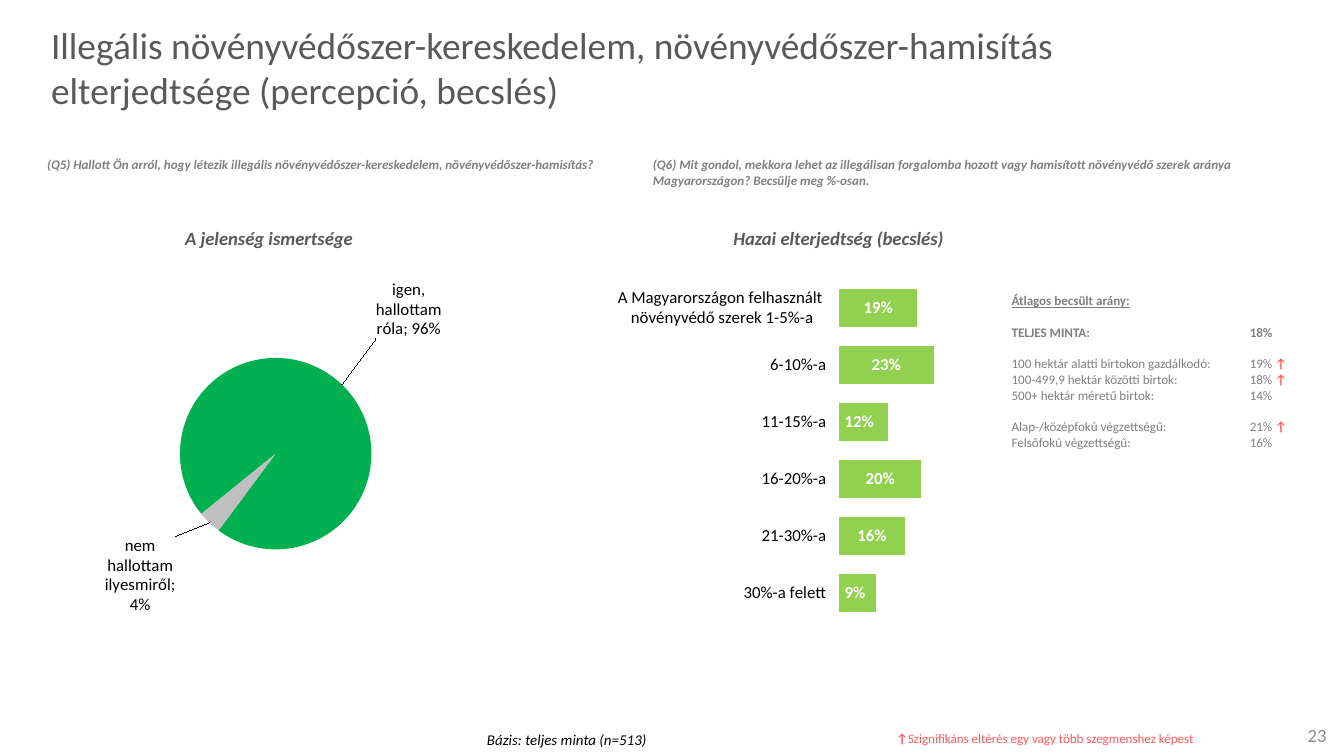
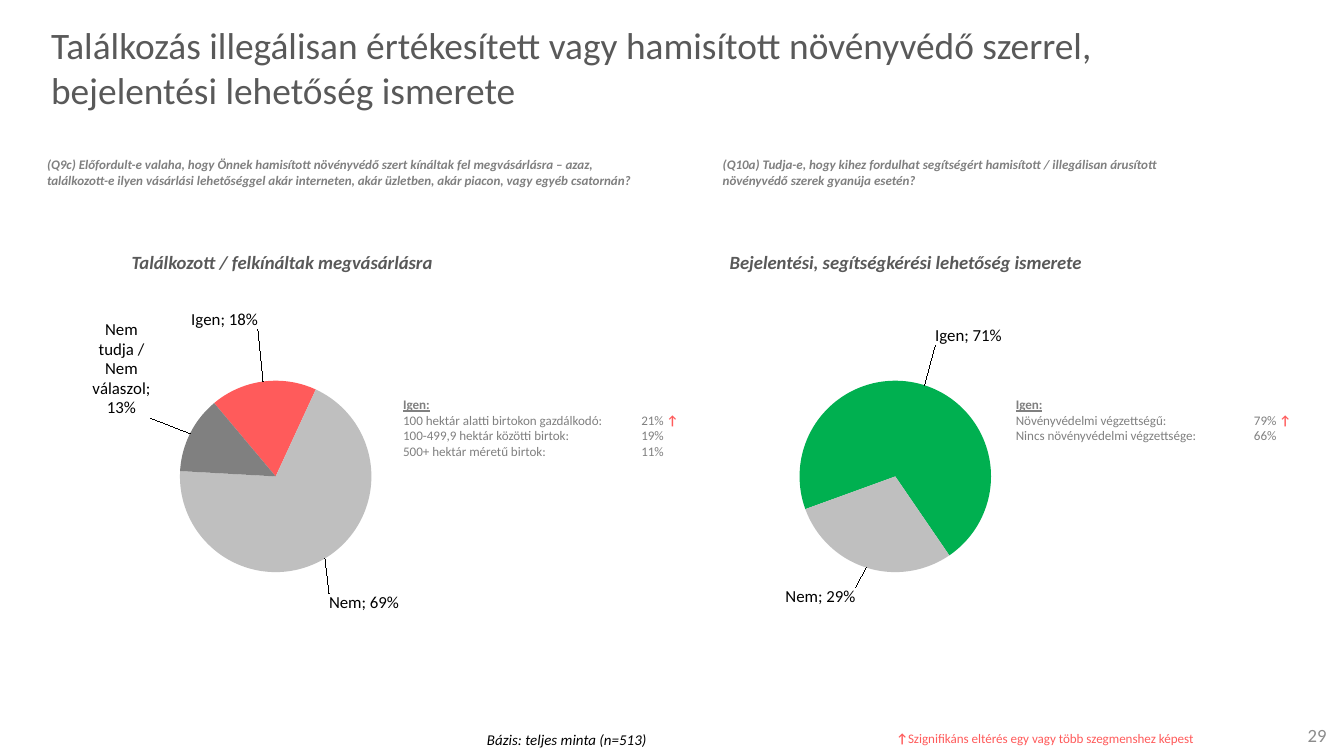
from dataclasses import dataclass, replace
from typing import NamedTuple

from pptx import Presentation, oxml
from pptx import util as u
from pptx.chart import data
from pptx.dml import color
from pptx.enum import chart as charts
from pptx.enum import text
from pptx.oxml import ns


@dataclass(frozen=True)
class Theme:
    font: str = "Calibri"
    black: str = "000000"
    white: str = "FFFFFF"
    title_gray: str = "595959"
    gray: str = "808080"
    number_gray: str = "8C8C8C"
    light_gray: str = "BFBFBF"
    green: str = "00B050"
    lime: str = "92D050"
    red: str = "FF5B5B"
    title_size: float = 20
    heading_size: float = 10
    label_size: float = 9
    base_size: float = 8
    small_size: float = 7
    note_gap: float = 8.5


THEME = Theme()


@dataclass(frozen=True)
class Style:
    size: float
    color: str
    bold: bool = False
    italic: bool = False
    underline: bool = False


TITLE = Style(THEME.title_size, THEME.title_gray)
HEADING = Style(THEME.heading_size, THEME.title_gray, bold=True, italic=True)
QUESTION = Style(THEME.small_size, THEME.gray, bold=True, italic=True)
NOTE = Style(THEME.small_size, THEME.gray)
NOTE_BOLD = replace(NOTE, bold=True)
NOTE_HEAD = replace(NOTE_BOLD, underline=True)
SIGNIFICANCE = Style(THEME.small_size, THEME.red)
ARROW = replace(SIGNIFICANCE, bold=True)
BASIS = Style(THEME.base_size, THEME.black, italic=True)
PAGE_NUMBER = Style(THEME.heading_size, THEME.number_gray)
PIE_LABEL = Style(THEME.label_size, THEME.black)
BAR_LABEL = Style(THEME.label_size, THEME.white, bold=True)


class Area(NamedTuple):
    left: float
    top: float
    width: float
    height: float


class Span(NamedTuple):
    words: str
    style: Style


class Caption(NamedTuple):
    area: Area
    words: str


class NoteLine(NamedTuple):
    label: str
    value: str
    arrow: bool = False
    bold: bool = False
    gap: bool = False


class Note(NamedTuple):
    area: Area
    head: str
    lines: list[NoteLine]


class Slice(NamedTuple):
    name: str
    value: int
    fill: str
    shift: tuple[float, float]


class Pie(NamedTuple):
    left: float
    top: float
    start: int
    slices: list[Slice]


class Bar(NamedTuple):
    name: str
    value: int
    position: str = "ctr"


class Survey(NamedTuple):
    number: int
    title: str
    questions: list[Caption]
    headings: list[Caption]
    pies: list[Pie]
    notes: list[Note]
    bars: list[Bar]


BAR_AREA = Area(10.97, 5.28, 13.59, 6.81)
BAR_PLOT = Area(0.36, 0, 0.57, 0.95)
PIE_SIZE = (7.7, 7.57)
PIE_PLOT = Area(0.23, 0.14, 0.47, 0.71)
TITLE_AREA = Area(0.71, 0.41, 22.5, 1.7)
NUMBER_AREA = Area(24, 13.51, 1.32, 0.76)
LEGEND_AREA = Area(16.69, 13.69, 6.58, 0.56)
BASIS_AREA = Area(8.15, 13.69, 5.13, 0.61)
NOTE_TABS = ((4.5, "l"), (4.72, "ctr"))

SURVEYS = [
    Survey(
        23,
        "Illegális növényvédőszer-kereskedelem, növényvédőszer-hamisítás elterjedtsége (percepció, becslés)",
        [Caption(Area(0.64, 2.84, 11.86, 0.56), "(Q5) Hallott Ön arról, hogy létezik illegális "
                 "növényvédőszer-kereskedelem, növényvédőszer-hamisítás?"),
         Caption(Area(12.09, 2.84, 12.09, 0.86), "(Q6) Mit gondol, mekkora lehet az illegálisan forgalomba "
                 "hozott vagy hamisított növényvédő szerek aránya Magyarországon? Becsülje meg %-osan.")],
        [Caption(Area(3.25, 4.17, 3.71, 0.69), "A jelenség ismertsége"),
         Caption(Area(13.61, 4.17, 4.55, 0.69), "Hazai elterjedtség (becslés)")],
        [Pie(1.63, 4.83, 231, [
            Slice("igen, hallottam róla", 96, THEME.green, (0.07, -0.1)),
            Slice("nem hallottam ilyesmiről", 4, THEME.light_gray, (-0.07, 0.02))])],
        [Note(Area(18.87, 5.41, 6.02, 3.25), "Átlagos becsült arány:", [
            NoteLine("TELJES MINTA:", "18%", bold=True, gap=True),
            NoteLine("100 hektár alatti birtokon gazdálkodó:", "19%", arrow=True, gap=True),
            NoteLine("100-499,9 hektár közötti birtok:", "18%", arrow=True),
            NoteLine("500+ hektár méretű birtok:", "14%"),
            NoteLine("Alap-/középfokú végzettségű:", "21%", arrow=True, gap=True),
            NoteLine("Felsőfokú végzettségű:", "16%")])],
        [Bar("A Magyarországon felhasznált \nnövényvédő szerek 1-5%-a", 19), Bar("6-10%-a", 23),
         Bar("11-15%-a", 12, "inBase"), Bar("16-20%-a", 20), Bar("21-30%-a", 16),
         Bar("30%-a felett", 9, "inBase")],
    ),
    Survey(
        29,
        "Találkozás illegálisan értékesített vagy hamisított növényvédő szerrel, bejelentési lehetőség ismerete",
        [Caption(Area(0.64, 2.84, 11.86, 0.86), "(Q9c) Előfordult-e valaha, hogy Önnek hamisított növényvédő "
                 "szert kínáltak fel megvásárlásra – azaz, találkozott-e ilyen vásárlási lehetőséggel akár "
                 "interneten, akár üzletben, akár piacon, vagy egyéb csatornán?"),
         Caption(Area(13.41, 2.84, 9.6, 0.86), "(Q10a) Tudja-e, hogy kihez fordulhat segítségért hamisított / "
                 "illegálisan árusított növényvédő szerek gyanúja esetén?")],
        [Caption(Area(2.24, 4.62, 6.32, 0.69), "Találkozott / felkínáltak megvásárlásra"),
         Caption(Area(13.54, 4.62, 7.29, 0.69), "Bejelentési, segítségkérési lehetőség ismerete")],
        [Pie(1.63, 5.26, 320, [
            Slice("Igen", 18, THEME.red, (-0.01, -0.11)),
            Slice("Nem", 69, THEME.light_gray, (0, 0.07)),
            Slice("Nem tudja / Nem válaszol", 13, THEME.gray, (-0.08, -0.03))]),
         Pie(13.34, 5.26, 250, [
             Slice("Igen", 71, THEME.green, (0.02, -0.08)),
             Slice("Nem", 29, THEME.light_gray, (-0.02, 0.03))])],
        [Note(Area(18.95, 7.37, 6.02, 1.14), "Igen:", [
            NoteLine("Növényvédelmi végzettségű:", "79%", arrow=True),
            NoteLine("Nincs növényvédelmi végzettsége:", "66%")]),
         Note(Area(7.37, 7.37, 6.02, 1.45), "Igen:", [
             NoteLine("100 hektár alatti birtokon gazdálkodó:", "21%", arrow=True),
             NoteLine("100-499,9 hektár közötti birtok:", "19%"),
             NoteLine("500+ hektár méretű birtok:", "11%")])],
        [],
    ),
]


def lengths(area: Area) -> list[u.Length]:
    return [u.Cm(value) for value in area]


def write(para, spans: list[Span]) -> None:
    para.text = spans[0].words
    for span in spans[1:]:
        para.add_run().text = span.words
    for run, span in zip(para.runs, spans):
        font, style = run.font, span.style
        font.name, font.size = THEME.font, u.Pt(style.size)
        font.bold, font.italic, font.underline = style.bold, style.italic, style.underline
        font.color.rgb = color.RGBColor.from_string(style.color)


def add_text(page, area: Area, spans: list[Span], wrap: bool = True, align=text.PP_ALIGN.LEFT):
    box = page.shapes.add_textbox(*lengths(area))
    frame = box.text_frame
    frame.word_wrap = wrap
    frame.auto_size = text.MSO_AUTO_SIZE.SHAPE_TO_FIT_TEXT
    write(frame.paragraphs[0], spans)
    frame.paragraphs[0].alignment = align
    return box


def add_note(page, note: Note) -> None:
    frame = add_text(page, note.area, [Span(note.head, NOTE_HEAD)]).text_frame
    for line in note.lines:
        para = frame.add_paragraph()
        tabs = oxml.parse_xml(f"<a:tabLst {ns.nsdecls('a')}>" + "".join(
            f'<a:tab pos="{u.Cm(stop)}" algn="{align}"/>' for stop, align in NOTE_TABS) + "</a:tabLst>")
        para._p.get_or_add_pPr().append(tabs)
        if line.gap:
            para.space_before = u.Pt(THEME.note_gap)
        words = f"{line.label}\t{line.value}" + (" " if line.arrow else "")
        spans = [Span(words, NOTE_BOLD if line.bold else NOTE)]
        write(para, spans + ([Span("↑", ARROW)] if line.arrow else []))


def label_body(style: Style, number_format: str, position: str, category: bool) -> str:
    return (f"<c:numFmt formatCode='{number_format}' sourceLinked='0'/>"
            "<c:spPr><a:noFill/><a:ln><a:noFill/></a:ln></c:spPr>"
            f'<c:txPr><a:bodyPr wrap="square"/><a:p><a:pPr><a:defRPr sz="{style.size * 100}" b="{int(style.bold)}">'
            f'<a:solidFill><a:srgbClr val="{style.color}"/></a:solidFill><a:latin typeface="{THEME.font}"/>'
            '</a:defRPr></a:pPr><a:endParaRPr lang="hu-HU"/></a:p></c:txPr>'
            f'<c:dLblPos val="{position}"/><c:showLegendKey val="0"/><c:showVal val="1"/>'
            f'<c:showCatName val="{int(category)}"/><c:showSerName val="0"/><c:showPercent val="0"/>'
            '<c:showBubbleSize val="0"/><c:separator>; </c:separator>')


def point_label(index: int, body: str, shift: tuple[float, float] = (0, 0)) -> str:
    layout = ("<c:layout><c:manualLayout>"
              f'<c:x val="{shift[0]}"/><c:y val="{shift[1]}"/></c:manualLayout></c:layout>') if any(shift) else ""
    return f'<c:dLbl><c:idx val="{index}"/>{layout}{body}</c:dLbl>'


def set_labels(series, content: str) -> None:
    old = series.data_labels._element
    old.getparent().replace(old, oxml.parse_xml(f"<c:dLbls {ns.nsdecls('c', 'a')}>{content}</c:dLbls>"))


def add_chart(page, kind, area: Area, plot: Area, names: list[str], values: list[int], size: float):
    figures = data.CategoryChartData()
    figures.categories = names
    figures.add_series("Series 1", values)
    chart = page.shapes.add_chart(kind, *lengths(area), figures).chart
    chart.has_title = chart.has_legend = False
    chart.font.name, chart.font.size = THEME.font, u.Pt(size)
    chart.font.color.rgb = color.RGBColor.from_string(THEME.black)
    plot_area = chart._chartSpace.chart.plotArea
    for old in plot_area.findall(ns.qn("c:layout")):
        plot_area.remove(old)
    places = "".join(f'<c:{key} val="{value}"/>' for key, value in zip("xywh", plot))
    plot_area.insert(0, oxml.parse_xml(
        f"<c:layout {ns.nsdecls('c')}><c:manualLayout><c:layoutTarget val=\"inner\"/>"
        f'<c:xMode val="edge"/><c:yMode val="edge"/>{places}</c:manualLayout></c:layout>'))
    return chart


def add_pie(page, pie: Pie) -> None:
    chart = add_chart(page, charts.XL_CHART_TYPE.PIE, Area(pie.left, pie.top, *PIE_SIZE), PIE_PLOT,
                      [part.name for part in pie.slices], [part.value for part in pie.slices], THEME.base_size)
    plot = chart.plots[0]
    series = plot.series[0]
    for index, part in enumerate(pie.slices):
        fill = series.points[index].format.fill
        fill.solid()
        fill.fore_color.rgb = color.RGBColor.from_string(part.fill)
    body = label_body(PIE_LABEL, '#"%"', "outEnd", True)
    labels = "".join(point_label(index, body, part.shift) for index, part in enumerate(pie.slices))
    set_labels(series, labels + body + '<c:showLeaderLines val="1"/>')
    for old in plot._element.findall(ns.qn("c:firstSliceAng")):
        plot._element.remove(old)
    plot._element.append(oxml.parse_xml(f"<c:firstSliceAng {ns.nsdecls('c')} val=\"{pie.start}\"/>"))


def add_bars(page, bars: list[Bar]) -> None:
    chart = add_chart(page, charts.XL_CHART_TYPE.BAR_CLUSTERED, BAR_AREA, BAR_PLOT,
                      [bar.name for bar in bars], [bar.value for bar in bars], 11)
    plot, category, value = chart.plots[0], chart.category_axis, chart.value_axis
    plot.gap_width, plot.vary_by_categories = 50, False
    category.reverse_order = True
    category.major_tick_mark = charts.XL_TICK_MARK.OUTSIDE
    category.format.line.fill.background()
    category.tick_labels.font.size = u.Pt(THEME.label_size)
    value.minimum_scale, value.maximum_scale = 0, 100
    value.has_major_gridlines = value.visible = False
    series = plot.series[0]
    series.format.fill.solid()
    series.format.fill.fore_color.rgb = color.RGBColor.from_string(THEME.lime)
    number_format = '0"%"'
    labels = "".join(point_label(index, label_body(BAR_LABEL, number_format, bar.position, False))
                     for index, bar in enumerate(bars) if bar.position != "ctr")
    set_labels(series, labels + label_body(BAR_LABEL, number_format, "ctr", False))


def add_frame(page, survey: Survey) -> None:
    title = page.shapes.title
    title.left, title.top, title.width, title.height = lengths(TITLE_AREA)
    frame = title.text_frame
    frame.word_wrap, frame.auto_size = True, text.MSO_AUTO_SIZE.NONE
    frame.vertical_anchor = text.MSO_ANCHOR.MIDDLE
    write(frame.paragraphs[0], [Span(survey.title, TITLE)])
    frame.paragraphs[0].alignment = text.PP_ALIGN.LEFT
    number = add_text(page, NUMBER_AREA, [Span(str(survey.number), PAGE_NUMBER)], align=text.PP_ALIGN.RIGHT)
    number.text_frame.auto_size = text.MSO_AUTO_SIZE.NONE
    number.text_frame.vertical_anchor = text.MSO_ANCHOR.MIDDLE
    add_text(page, LEGEND_AREA, [Span("↑", ARROW), Span(
        "Szignifikáns eltérés egy vagy több szegmenshez képest", SIGNIFICANCE)])
    add_text(page, BASIS_AREA, [Span("Bázis: teljes minta (n=513)", BASIS)], align=text.PP_ALIGN.CENTER)


def main() -> None:
    deck = Presentation()
    deck.slide_width, deck.slide_height = u.Cm(25.4), u.Cm(14.29)
    for survey in SURVEYS:
        page = deck.slides.add_slide(deck.slide_layouts[5])
        add_frame(page, survey)
        if survey.bars:
            add_bars(page, survey.bars)
        for pie in survey.pies:
            add_pie(page, pie)
        for question in survey.questions:
            add_text(page, question.area, [Span(question.words, QUESTION)])
        for heading in survey.headings:
            add_text(page, heading.area, [Span(heading.words, HEADING)], wrap=False)
        for note in survey.notes:
            add_note(page, note)
    deck.save("out.pptx")


if __name__ == "__main__":
    main()
